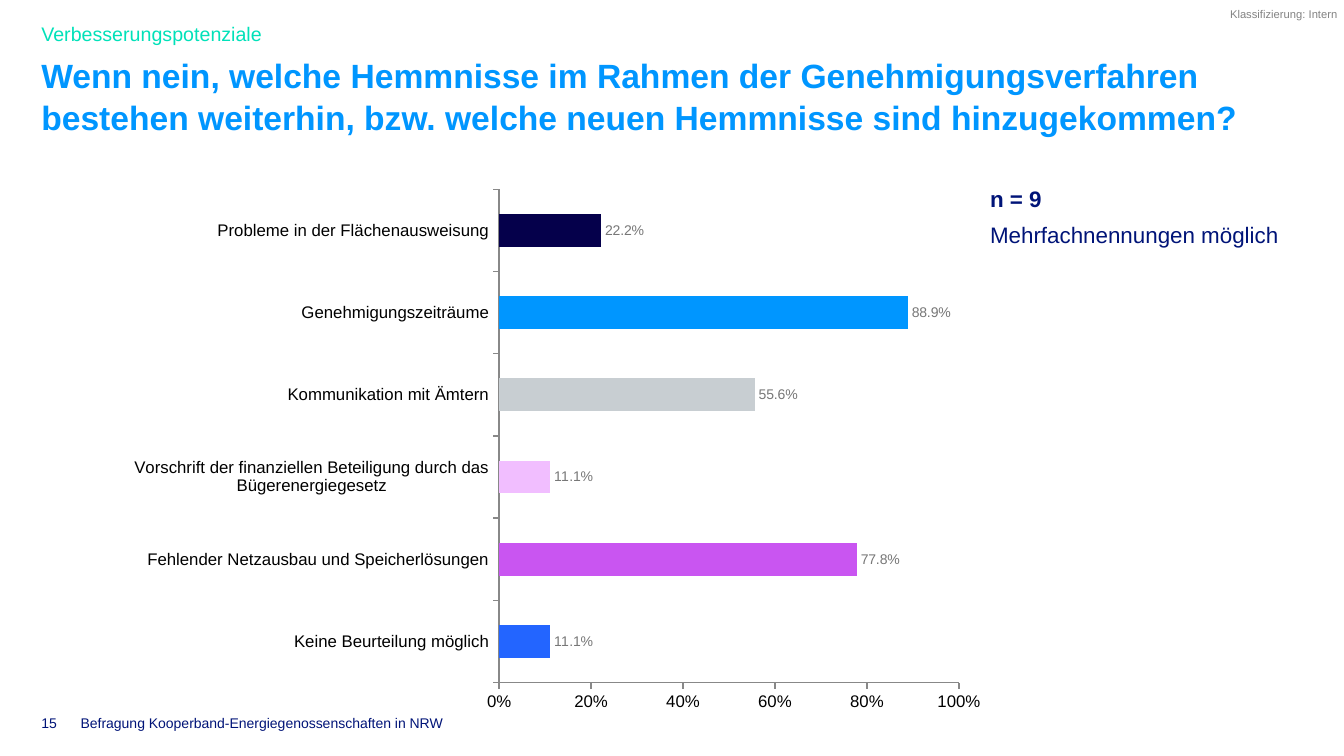
from lxml import etree
from pptx import Presentation
from pptx.chart.data import CategoryChartData
from pptx.dml.color import RGBColor
from pptx.enum.chart import XL_CHART_TYPE as ChartType, XL_LABEL_POSITION as LabelPosition
from pptx.enum.chart import XL_TICK_MARK as TickMark
from pptx.enum.text import MSO_ANCHOR as Anchor, PP_ALIGN as Align
from pptx.oxml import parse_xml
from pptx.oxml.ns import nsdecls, qn
from pptx.util import Inches, Pt

COLORS = {
    "navy": "001478", "blue": "0096FF", "mint": "00E1B9", "gray": "838383",
    "label": "777777", "axis": "888888", "black": "000000", "royal": "2365FF",
    "purple": "C955F1", "pink": "F1BEFF", "silver": "C8CED2", "midnight": "05004B",
}

OBSTACLES = [
    ("Keine Beurteilung möglich", 0.111, "royal"),
    ("Fehlender Netzausbau und Speicherlösungen", 0.778, "purple"),
    ("Vorschrift der finanziellen Beteiligung durch das Bügerenergiegesetz", 0.111, "pink"),
    ("Kommunikation mit Ämtern", 0.556, "silver"),
    ("Genehmigungszeiträume", 0.889, "blue"),
    ("Probleme in der Flächenausweisung", 0.222, "midnight"),
]


def style_font(font, size, color, bold=False):
    """Apply the deck typeface with the given size, colour and weight."""
    font.name = "Arial"
    font.size = Pt(size)
    font.bold = bold
    font.color.rgb = RGBColor.from_string(COLORS[color])


def fill_text(holder, box, lines, size, color, anchor=Anchor.TOP, spacing=1.0, wrap=True):
    """Place a text holder in its box and write (text, bold) lines."""
    holder.left, holder.top, holder.width, holder.height = (Inches(v) for v in box)
    frame = holder.text_frame
    frame.margin_left = frame.margin_top = frame.margin_right = frame.margin_bottom = 0
    frame.word_wrap = wrap
    frame.vertical_anchor = anchor
    frame.text = "\n".join(text for text, _ in lines)
    for number, (paragraph, (_, bold)) in enumerate(zip(frame.paragraphs, lines)):
        paragraph.alignment = Align.LEFT
        paragraph.line_spacing = spacing
        paragraph.space_before = Pt(6 if number else 0)
        for run in paragraph.runs:
            style_font(run.font, size, color, bold)


def add_text(slide, box, lines, size, color, **options):
    """Add a text box that holds the given lines."""
    holder = slide.shapes.add_textbox(*(Inches(v) for v in box))
    fill_text(holder, box, lines, size, color, **options)


def build_heading(slide, left, top):
    """Fill the section label and the headline below it."""
    section = slide.placeholders[1]
    fill_text(section, (left, top, 8.23, 0.28), [("Verbesserungspotenziale", False)],
              14, "mint", anchor=Anchor.BOTTOM)
    properties = section.text_frame.paragraphs[0]._p.get_or_add_pPr()
    properties.set("marL", "0")
    properties.set("indent", "0")
    etree.SubElement(properties, qn("a:buNone"))
    headline = ("Wenn nein, welche Hemmnisse im Rahmen der Genehmigungsverfahren bestehen "
                "weiterhin, bzw. welche neuen Hemmnisse sind hinzugekommen?")
    fill_text(slide.shapes.title, (left, top + 0.35, 12.52, 0.87), [(headline, True)],
              24, "blue", spacing=1.05)


def fix_plot_area(chart, x, y, width, height):
    """Pin the inner plot area to fractions of the chart."""
    layout = parse_xml(
        f'<c:layout {nsdecls("c")}><c:manualLayout><c:layoutTarget val="inner"/>'
        f'<c:xMode val="edge"/><c:yMode val="edge"/><c:x val="{x}"/><c:y val="{y}"/>'
        f'<c:w val="{width}"/><c:h val="{height}"/></c:manualLayout></c:layout>')
    plot_area = chart._chartSpace.chart.plotArea
    for automatic in plot_area.findall(qn("c:layout")):
        plot_area.remove(automatic)
    plot_area.insert(0, layout)


def build_obstacle_chart(slide, box):
    """Draw the bar chart of obstacles in its box."""
    data = CategoryChartData(number_format="0.0%")
    data.categories = [name for name, _, _ in OBSTACLES]
    data.add_series("Series 1", [share for _, share, _ in OBSTACLES])
    chart = slide.shapes.add_chart(
        ChartType.BAR_CLUSTERED, *(Inches(v) for v in box), data).chart
    chart.has_legend = False
    chart.has_title = False
    style_font(chart.font, 10, "navy")
    fix_plot_area(chart, 0.43, 0.02, 0.52, 0.91)

    for axis in (chart.category_axis, chart.value_axis):
        axis.has_major_gridlines = False
        axis.major_tick_mark = TickMark.OUTSIDE
        axis.minor_tick_mark = TickMark.NONE
        axis.format.line.color.rgb = RGBColor.from_string(COLORS["axis"])
        axis.format.line.width = Pt(1)
        style_font(axis.tick_labels.font, 12, "black")
    shares = chart.value_axis
    shares.minimum_scale, shares.maximum_scale, shares.major_unit = 0, 1, 0.2
    shares.tick_labels.number_format = "0%"
    shares.tick_labels.number_format_is_linked = False

    plot = chart.plots[0]
    plot.gap_width = 150
    plot.vary_by_categories = False
    plot.has_data_labels = True
    labels = plot.data_labels
    labels.show_value = True
    labels.number_format = "#0.0%"
    labels.number_format_is_linked = False
    labels.position = LabelPosition.OUTSIDE_END
    style_font(labels.font, 10, "label")
    for index, (_, _, color) in enumerate(OBSTACLES):
        fill = plot.series[0].points[index].format.fill
        fill.solid()
        fill.fore_color.rgb = RGBColor.from_string(COLORS[color])


def build_sample_note(slide, box):
    """State the sample size beside the chart."""
    add_text(slide, box, [("n = 9", True), ("Mehrfachnennungen möglich", False)],
             16, "navy", spacing=1.05)


def build_margins(slide, left, top):
    """Add the classification, the page number and the footer."""
    add_text(slide, (12.2, 0.07, 1.13, 0.13), [("Klassifizierung: Intern", False)],
             8, "gray", wrap=False)
    for offset, width, text in (
            (0, 0.24, "15"),
            (0.39, 5.63, "Befragung Kooperband-Energiegenossenschaften in NRW")):
        add_text(slide, (left + offset, top, width, 0.16), [(text, False)],
                 10, "navy", anchor=Anchor.BOTTOM, wrap=False)


def main():
    """Build the slide and save it."""
    deck = Presentation()
    deck.slide_width, deck.slide_height = Inches(13.33), Inches(7.5)
    slide = deck.slides.add_slide(deck.slide_layouts[1])
    build_heading(slide, 0.41, 0.17)
    build_obstacle_chart(slide, (1.18, 1.77, 8.77, 5.38))
    build_sample_note(slide, (9.82, 1.82, 3.11, 0.87))
    build_margins(slide, 0.41, 7.1)
    deck.save("out.pptx")


if __name__ == "__main__":
    main()
